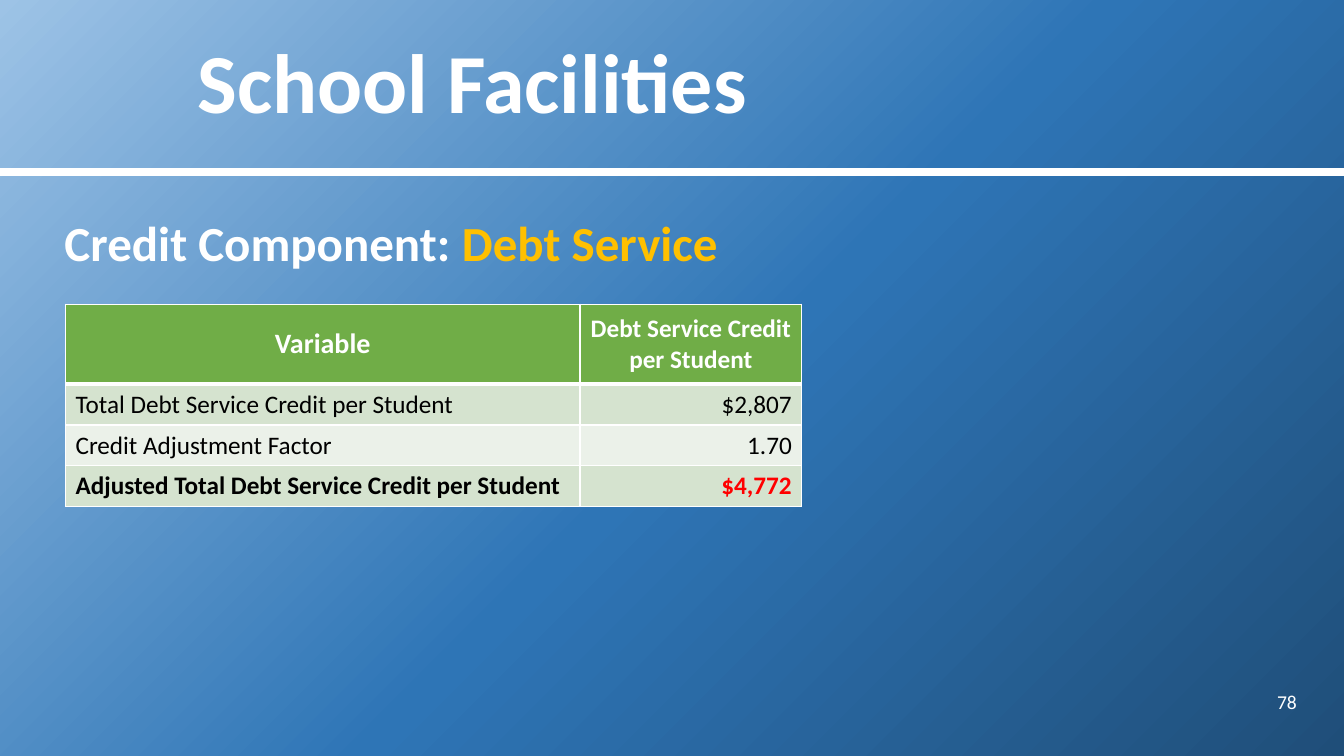
"""Builds the School Facilities slide on the debt service credit."""
import lxml.etree
import pptx
import pptx.dml.color
import pptx.enum.shapes
import pptx.enum.text
import pptx.oxml
import pptx.oxml.ns
import pptx.util

Pt = pptx.util.Pt
qn = pptx.oxml.ns.qn
ALIGN = pptx.enum.text.PP_ALIGN
MIDDLE = pptx.enum.text.MSO_ANCHOR.MIDDLE
TOP = pptx.enum.text.MSO_ANCHOR.TOP
NS = pptx.oxml.ns.nsdecls("a")

COLORS = {
    "white": "FFFFFF", "black": "000000", "gold": "FFC000", "red": "FF0000",
    "header": "70AD47", "band": "D5E3CF", "plain": "EBF1E9",
    "light": "9DC3E6", "mid": "2E75B6", "dark": "1F4E79",
}


def rgb(name):
    return pptx.dml.color.RGBColor.from_string(COLORS[name])


def add_run(p, text, size=18, color="white", bold=False, shadow=False):
    r = p.add_run()
    r.text = text
    r.font.name = "Calibri"
    r.font.size = Pt(size)
    r.font.bold = bold
    r.font.color.rgb = rgb(color)
    if shadow:
        effect = pptx.oxml.parse_xml(
            f'<a:effectLst {NS}><a:outerShdw blurRad="38100" dist="38100" dir="2700000" algn="tl">'
            f'<a:srgbClr val="{COLORS["black"]}"><a:alpha val="43000"/></a:srgbClr>'
            '</a:outerShdw></a:effectLst>')
        r.font.fill._xPr.find(qn("a:solidFill")).addnext(effect)


def add_text(s, box, runs, align=ALIGN.LEFT, anchor=MIDDLE, spacing=1.0):
    tf = s.shapes.add_textbox(*map(Pt, box)).text_frame
    tf.word_wrap = True
    tf.vertical_anchor = anchor
    p = tf.paragraphs[0]
    p.alignment = align
    p.line_spacing = spacing
    for text, fmt in runs:
        add_run(p, text, **fmt)


def set_background(s):
    s.background.fill.solid()
    fill = s.element.find(".//" + qn("p:bgPr")).find(qn("a:solidFill"))
    stops = "".join(
        f'<a:gs pos="{pos * 1000}"><a:srgbClr val="{COLORS[name]}"/></a:gs>'
        for pos, name in ((0, "light"), (53, "mid"), (100, "dark")))
    gradient = pptx.oxml.parse_xml(
        f'<a:gradFill {NS} rotWithShape="1"><a:gsLst>{stops}</a:gsLst>'
        '<a:path path="circle"><a:fillToRect r="100000" b="100000"/></a:path></a:gradFill>')
    fill.getparent().replace(fill, gradient)


def add_rule(s, x1, x2, y, width):
    line = s.shapes.add_connector(
        pptx.enum.shapes.MSO_CONNECTOR.STRAIGHT, Pt(x1), Pt(y), Pt(x2), Pt(y))
    line.line.color.rgb = rgb("white")
    line.line.width = Pt(width)
    lxml.etree.SubElement(line.element.spPr, qn("a:effectLst"))


def set_borders(cell, **widths):
    tcPr = cell._tc.get_or_add_tcPr()
    for i, (side, width) in enumerate(widths.items()):
        tcPr.insert(i, pptx.oxml.parse_xml(
            f'<a:{side} {NS} w="{Pt(width)}"><a:solidFill>'
            f'<a:srgbClr val="{COLORS["white"]}"/></a:solidFill></a:{side}>'))


def fill_cell(cell, text, fill, align, anchor=MIDDLE, bottom=1, top=1, **fmt):
    cell.fill.solid()
    cell.fill.fore_color.rgb = rgb(fill)
    cell.vertical_anchor = anchor
    p = cell.text_frame.paragraphs[0]
    p.alignment = align
    add_run(p, text, **fmt)
    set_borders(cell, lnL=1, lnR=1, lnT=top, lnB=bottom)


def add_credit_table(s, x, y, widths, heights):
    table = s.shapes.add_table(
        len(heights), len(widths), Pt(x), Pt(y), Pt(sum(widths)), Pt(sum(heights))).table
    for col, width in zip(table.columns, widths):
        col.width = Pt(width)
    for row, height in zip(table.rows, heights):
        row.height = Pt(height)
    headers = (("Variable", 20), ("Debt Service Credit per Student", 18))
    for c, (text, size) in enumerate(headers):
        fill_cell(table.cell(0, c), text, "header", ALIGN.CENTER,
                  bottom=3, size=size, bold=True)
    body = (
        ("Total Debt Service Credit per Student", "$2,807"),
        ("Credit Adjustment Factor", "1.70"),
        ("Adjusted Total Debt Service Credit per Student", "$4,772"),
    )
    for i, (label, value) in enumerate(body, 1):
        total = i == len(body)
        fill = "band" if i % 2 else "plain"
        top = 3 if i == 1 else 1
        fill_cell(table.cell(i, 0), label, fill, ALIGN.LEFT, top=top,
                  color="black", bold=total)
        fill_cell(table.cell(i, 1), value, fill, ALIGN.RIGHT, TOP, top=top,
                  color="red" if total else "black", bold=total)


def main():
    prs = pptx.Presentation()
    prs.slide_width, prs.slide_height = Pt(960), Pt(540)
    s = prs.slides.add_slide(prs.slide_layouts[6])
    set_background(s)
    add_rule(s, -1.5, 960, 123, 6)
    add_text(s, (134, 0, 799, 123),
             [("School Facilities", dict(size=60, bold=True, shadow=True))], spacing=0.9)
    add_text(s, (869.5, 487, 64, 29), [("78", dict(size=14))], align=ALIGN.RIGHT)
    add_text(s, (39, 140, 894, 379),
             [("Credit Component: ", dict(size=35, bold=True)),
              ("Debt Service", dict(size=35, bold=True, color="gold"))],
             anchor=TOP, spacing=1.2)
    add_credit_table(s, 46.8, 217.4, (367.5, 158.5), (57, 29.2, 29.2, 29.2))
    prs.save("out.pptx")


if __name__ == "__main__":
    main()
